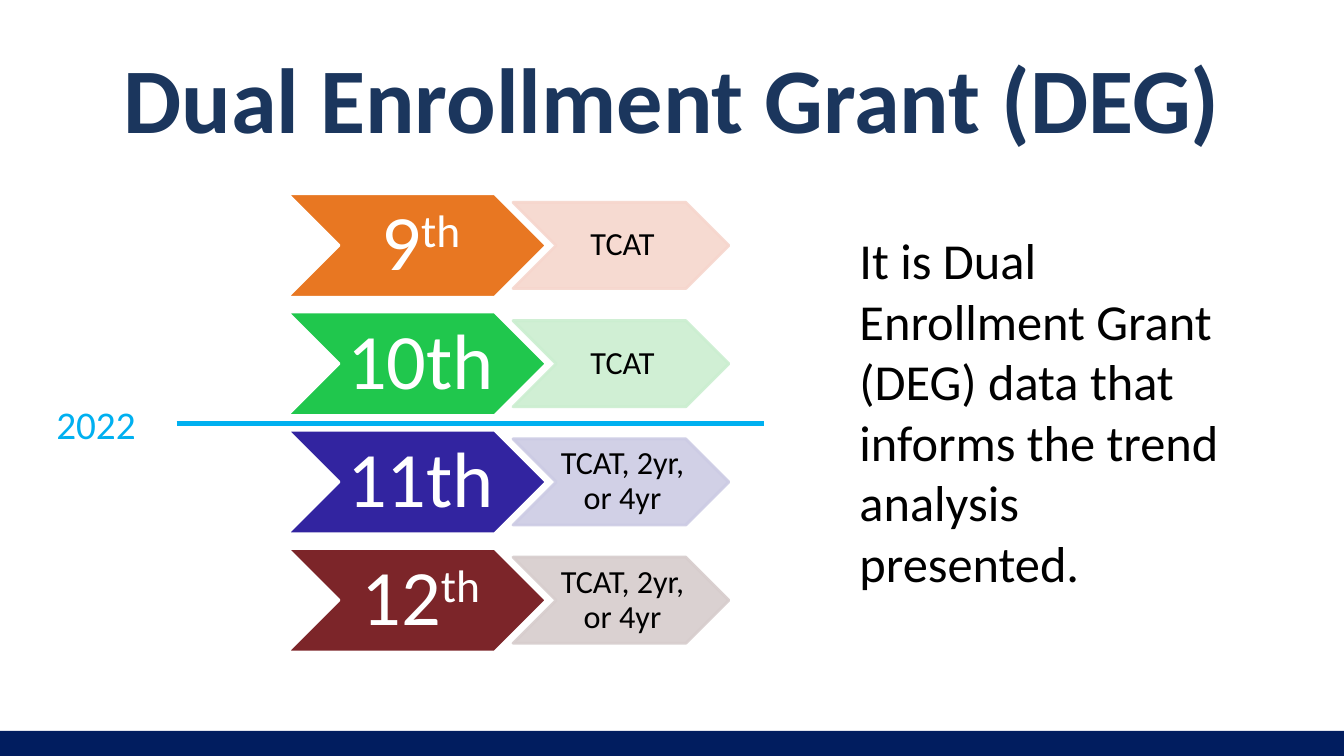
from lxml.etree import SubElement
from pptx import Presentation
from pptx.dml.color import RGBColor as Rgb
from pptx.enum.shapes import MSO_CONNECTOR as Link, MSO_SHAPE as Form
from pptx.enum.text import MSO_ANCHOR as Anchor, PP_ALIGN as Align
from pptx.oxml.ns import qn
from pptx.util import Cm, Pt

# Content
TITLE = "Dual Enrollment Grant (DEG)"
BODY = "It is Dual Enrollment Grant (DEG) data that informs the trend analysis presented."
YEAR = "2022"
GRADES = [  # number, ending, raised ending, schools, dark, pale
    ("9", "th", True, "TCAT", "orange", "peach"),
    ("10", "th", False, "TCAT", "green", "mint"),
    ("11", "th", False, "TCAT, 2yr, or 4yr", "indigo", "lilac"),
    ("12", "th", True, "TCAT, 2yr, or 4yr", "maroon", "taupe"),
]
COLORS = {
    "orange": "E87722", "peach": "F6D6CD", "green": "20C74D", "mint": "CBEED0",
    "indigo": "3224A0", "lilac": "CCCBE4", "maroon": "7C2529", "taupe": "D7CDCD",
    "navy": "011D5F", "title": "1B365D", "sky": "00B0F0",
    "white": "FFFFFF", "black": "000000",
}

# Layout in cm
WIDE, HIGH = 33.87, 19.05
TOP, STEP = 4.88, 2.98
DARK = (7.24, 6.53, 2.61)  # left, width, height
PALE = (12.93, 5.44, 2.17)

deck = Presentation()
deck.slide_width, deck.slide_height = Cm(WIDE), Cm(HIGH)
slide = deck.slides.add_slide(deck.slide_layouts[6])
shapes = slide.shapes


def tint(name):
    return Rgb.from_string(COLORS[name])


def fade(fill):
    for color in fill.iter(qn("a:srgbClr")):
        SubElement(color, qn("a:alpha"), val="90000")


def block(form, box, fill, edge=None):
    shape = shapes.add_shape(form, *map(Cm, box))
    shape.shadow.inherit = False
    shape.fill.solid()
    shape.fill.fore_color.rgb = tint(fill)
    if edge:
        shape.line.color.rgb = tint(edge)
        shape.line.width = Pt(2)
    else:
        shape.line.fill.background()
    return shape


def label(text, box, size, color, bold=False, align=Align.LEFT,
          anchor=Anchor.TOP, pads=None, wrap=True):
    frame = shapes.add_textbox(*map(Cm, box)).text_frame
    frame.word_wrap = wrap
    frame.vertical_anchor = anchor
    if pads:
        frame.margin_left, frame.margin_top = Cm(pads[0]), Cm(pads[1])
        frame.margin_right, frame.margin_bottom = 0, Cm(pads[1])
    frame.text = text
    para = frame.paragraphs[0]
    para.alignment = align
    style(para.runs[0], size, color, bold)
    return para


def style(run, size, color, bold=False):
    font = run.font
    font.name, font.size, font.bold = "Calibri", Pt(size), bold
    font.color.rgb = tint(color)


def arrow(spot, top, fill, edge, text, size, color, pads, wrap):
    left, width, high = spot
    shape = block(Form.CHEVRON, (left, top, width, high), fill, edge)
    inner = (left + high / 2, top, width - high, high)
    para = label(text, inner, size, color, align=Align.CENTER,
                 anchor=Anchor.MIDDLE, pads=pads, wrap=wrap)
    para.line_spacing = 0.9
    return shape, para


# Footer bar and title
block(Form.RECTANGLE, (0, HIGH - 0.63, WIDE, 0.63), "navy")
label(TITLE, (1.7, 0.85, 30.48, 3.18), 66, "title", True, Align.CENTER, Anchor.MIDDLE)

# Grade rows
for row, (grade, end, raised, schools, dark, pale) in enumerate(GRADES):
    top = TOP + row * STEP
    text = grade if raised else grade + end
    _, para = arrow(DARK, top, dark, "white", text, 56, "white", (0.2, 0.1), False)
    if raised:
        run = para.add_run()
        run.text = end
        style(run, 56, "white")
        run.font._element.set("baseline", "30000")
    drop = (DARK[2] - PALE[2]) / 2
    shape, _ = arrow(PALE, top + drop, pale, pale, schools, 23, "black", (0.08, 0.05), True)
    fade(shape._element.spPr)

# Explanation
label(BODY, (21.41, 5.66, 10.16, 9.5), 36, "black")

# Year line
line = shapes.add_connector(Link.STRAIGHT, Cm(4.45), Cm(10.67), Cm(19.25), Cm(10.67))
line.line.color.rgb = tint("sky")
line.line.width = Pt(3)
SubElement(line._element.spPr, qn("a:effectLst"))
label(YEAR, (1.17, 9.96, 2.74, 1.45), 28, "sky")

deck.save("out.pptx")
